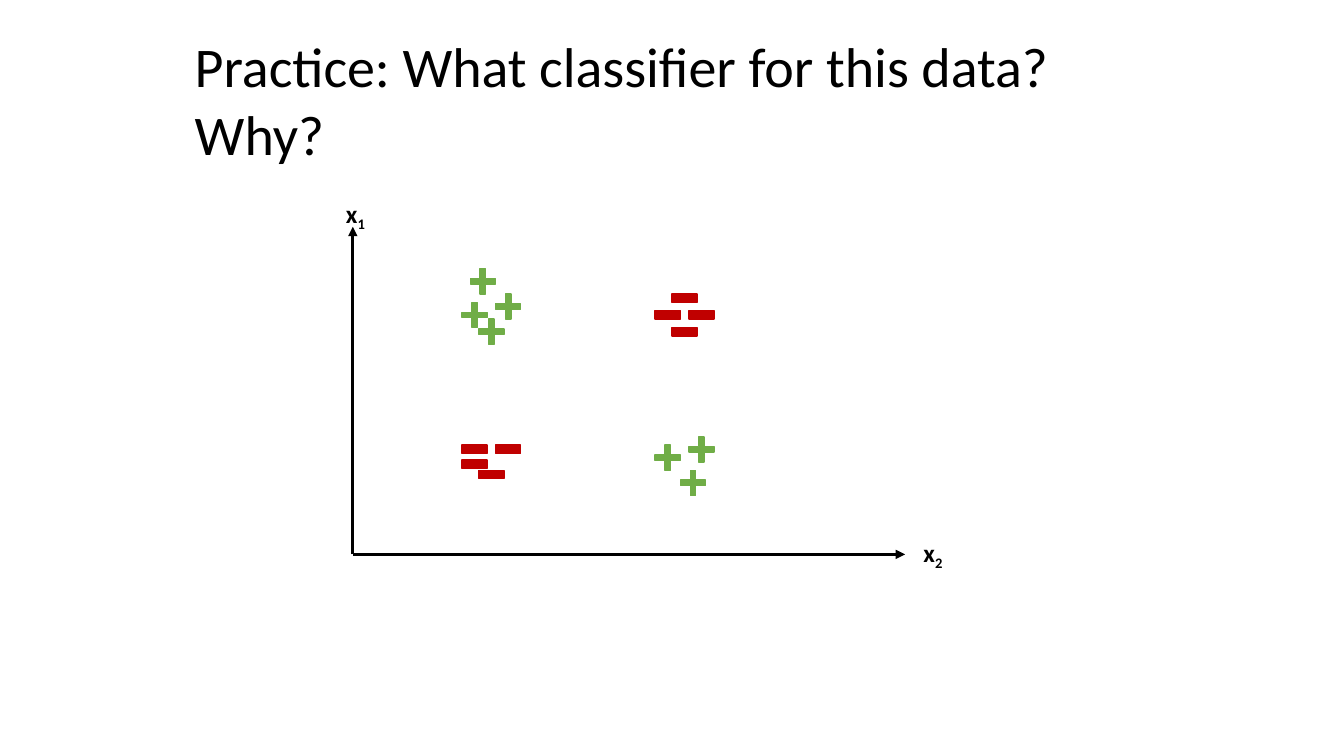
import pptx
import pptx.util
import pptx.dml.color
import pptx.enum.shapes
import pptx.enum.text
import pptx.oxml.ns
from lxml import etree

COLORS = {"text": "000000", "positive": "70AD47", "negative": "C00000"}
SHAPES = pptx.enum.shapes.MSO_SHAPE
ANCHORS = pptx.enum.text.MSO_ANCHOR


def px(n):
    return pptx.util.Emu(n * 9525)


def rgb(name):
    return pptx.dml.color.RGBColor.from_string(COLORS[name])


class Deck:
    font = "Calibri"

    def __init__(self, width, height):
        self.prs = pptx.Presentation()
        self.prs.slide_width, self.prs.slide_height = px(width), px(height)
        self.s = self.prs.slides.add_slide(self.prs.slide_layouts[6])

    def text(self, x, y, w, h, text, size, bold=False, wrap=True,
             anchor=ANCHORS.TOP, subscript=None):
        tf = self.s.shapes.add_textbox(px(x), px(y), px(w), px(h)).text_frame
        tf.word_wrap = wrap
        tf.vertical_anchor = anchor
        p = tf.paragraphs[0]
        p.font.name = self.font
        p.font.size = pptx.util.Pt(size)
        p.font.bold = bold
        p.font.color.rgb = rgb("text")
        p.add_run().text = text
        if subscript:
            r = p.add_run()
            r.text = subscript
            r._r.get_or_add_rPr().set("baseline", "-25000")

    def arrow(self, x1, y1, x2, y2):
        sp = self.s.shapes.add_connector(
            pptx.enum.shapes.MSO_CONNECTOR.STRAIGHT, px(x1), px(y1), px(x2), px(y2))
        sp.line.color.rgb = rgb("text")
        sp.line.width = pptx.util.Pt(2.25)
        qn = pptx.oxml.ns.qn
        etree.SubElement(sp.line._get_or_add_ln(), qn("a:tailEnd"), type="triangle")
        etree.SubElement(sp._element.spPr, qn("a:effectLst"))

    def marker(self, kind, x, y, w, h, color):
        sp = self.s.shapes.add_shape(kind, px(x), px(y), px(w), px(h))
        sp.shadow.inherit = False
        sp.fill.solid()
        sp.fill.fore_color.rgb = rgb(color)
        sp.line.color.rgb = rgb(color)
        sp.line.width = pptx.util.Pt(1)
        return sp

    def plus(self, x, y):
        self.marker(SHAPES.CROSS, x, y, 24, 24, "positive").adjustments[0] = 0.39

    def minus(self, x, y):
        self.marker(SHAPES.RECTANGLE, x, y, 24, 8, "negative")


def main():
    deck = Deck(1280, 720)
    deck.text(176, 25, 928, 139, "Practice: What classifier for this data? Why?",
              40, anchor=ANCHORS.MIDDLE)

    origin = (336, 528)
    for end in ((336, 216), (862, 528)):
        deck.arrow(*origin, *end)
    for x, y, index in ((320, 184, "1"), (870, 507, "2")):
        deck.text(x, y, 38, 38, "x", 18, bold=True, wrap=False, subscript=index)

    top_left = [(440, 288), (456, 304), (472, 280), (448, 256)]
    bottom_right = [(624, 424), (648, 448), (656, 416)]
    for x, y in top_left + bottom_right:
        deck.plus(x, y)

    top_right = [(624, 296), (640, 312), (656, 296), (640, 280)]
    bottom_left = [(440, 438), (456, 448), (472, 424), (440, 424)]
    for x, y in top_right + bottom_left:
        deck.minus(x, y)

    deck.prs.save("out.pptx")


if __name__ == "__main__":
    main()
